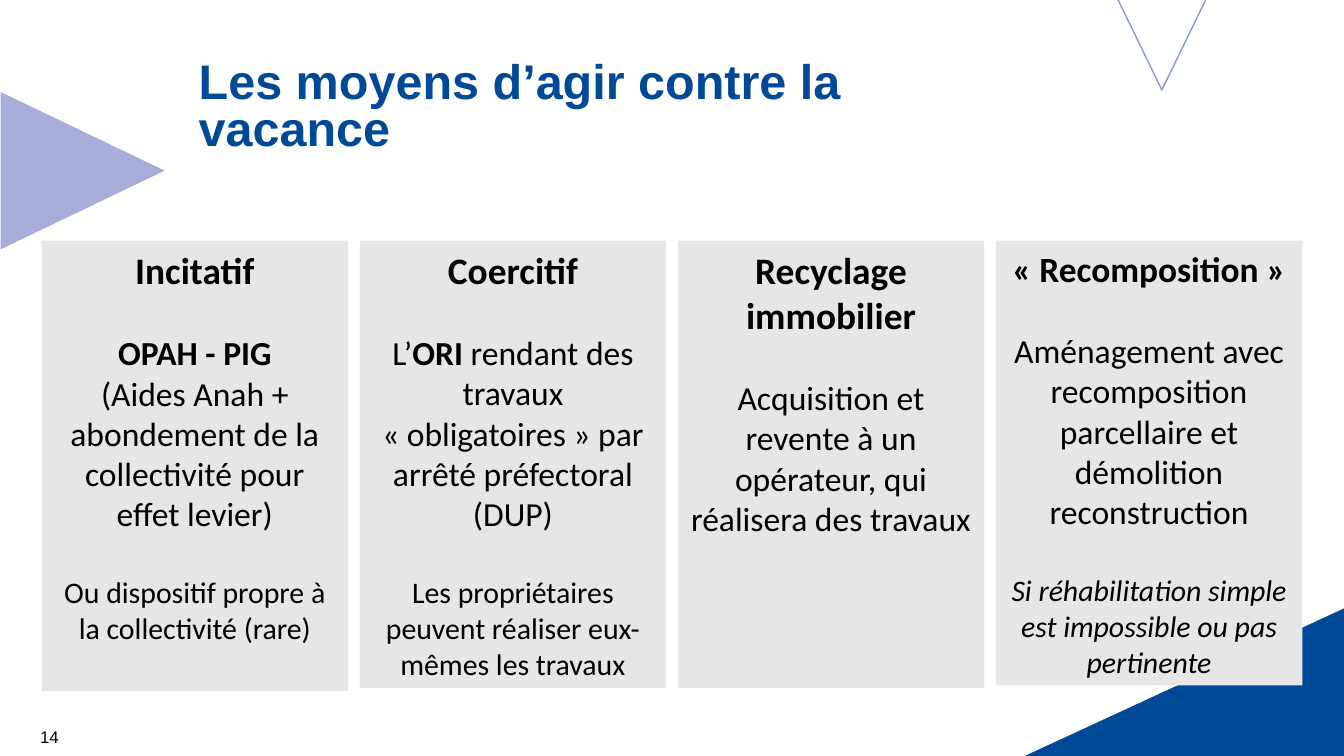
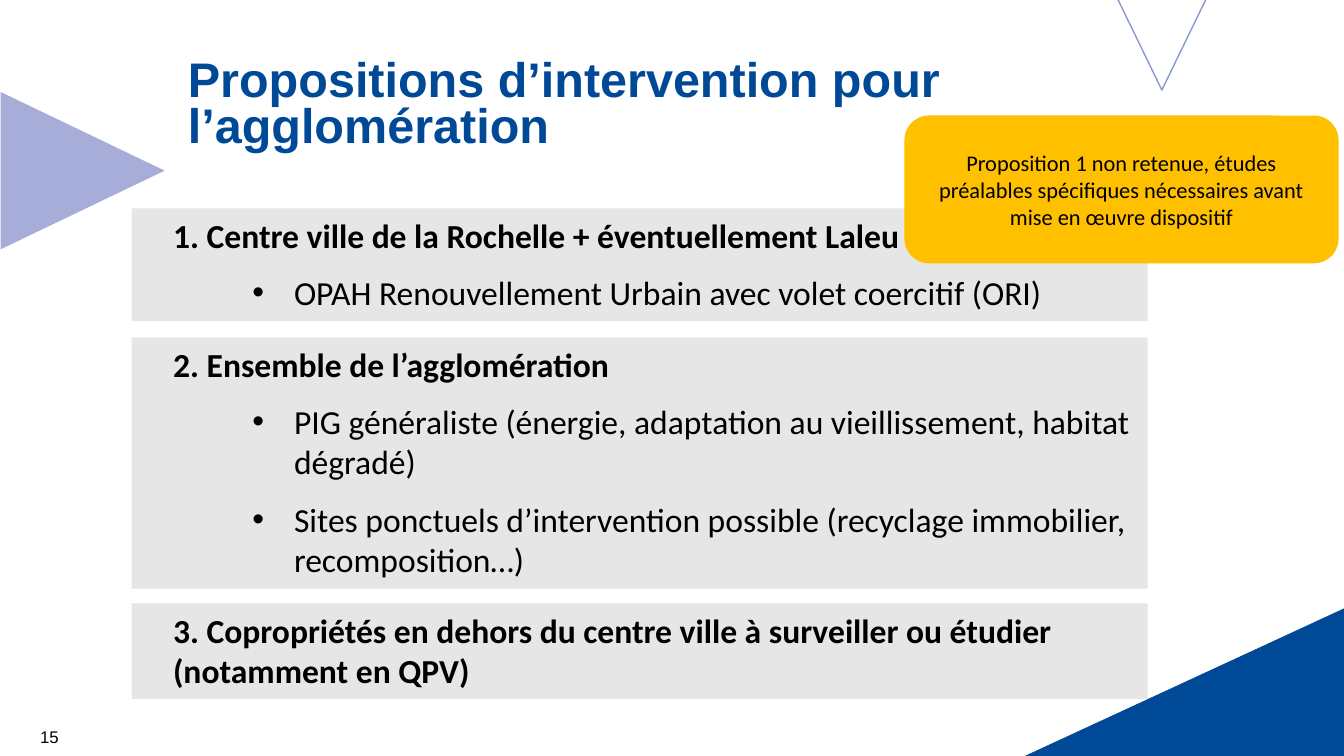
import lxml.etree
import pptx
import pptx.dml.color
import pptx.enum.shapes
import pptx.enum.text
import pptx.oxml.ns
import pptx.util

Inches = pptx.util.Inches
Pt = pptx.util.Pt
RGBColor = pptx.dml.color.RGBColor
SHAPE = pptx.enum.shapes.MSO_SHAPE
ALIGN = pptx.enum.text.PP_ALIGN
ANCHOR = pptx.enum.text.MSO_ANCHOR
AUTO_SIZE = pptx.enum.text.MSO_AUTO_SIZE

BLUE = RGBColor(0x00, 0x49, 0x96)
LAVENDER = RGBColor(0xA5, 0xAD, 0xD8)
PERIWINKLE = RGBColor(0x89, 0x97, 0xD4)
GREY = RGBColor(0xE6, 0xE6, 0xE6)
AMBER = RGBColor(0xFF, 0xC0, 0x00)
BLACK = RGBColor(0x00, 0x00, 0x00)

SLIDE_SIZE = (10, 10 * 9 / 16)
NUMBER_AREA = (0.2, 5.33, 1.02, 0.3)
NO_BREAK_SPACE = chr(160)

MEANS_TITLE = ("Les moyens d’agir contre la vacance", (1.38, 0.23, 5.36, 1.17))
PLANS_TITLE = ("Propositions d’intervention pour l’agglomération",
               (1.3, 0.21, 6.14, 1.17))

# Height, heading size, then (style, text); asterisks enclose bold words.
MEANS = [
    (3.35, 20, [
        ("heading", "Incitatif"),
        ("lead", "*OPAH - PIG*"),
        ("body", "(Aides Anah + abondement de la collectivité pour effet levier)"),
        ("note", "Ou dispositif propre à la collectivité (rare)"),
    ]),
    (3.33, 20, [
        ("heading", "Coercitif"),
        ("lead", "L’*ORI* rendant des travaux « obligatoires » par arrêté "
                 "préfectoral (DUP)"),
        ("note", "Les propriétaires peuvent réaliser eux-mêmes les travaux"),
    ]),
    (3.33, 20, [
        ("heading", "Recyclage immobilier"),
        ("lead", "Acquisition et revente à un opérateur, qui réalisera des travaux"),
    ]),
    (3.31, 19, [
        ("heading", "« Recomposition »"),
        ("lead", "Aménagement avec recomposition parcellaire et démolition "
                 "reconstruction"),
        ("remark", "Si réhabilitation simple est impossible ou pas pertinente"),
    ]),
]
# Style: font values and space before, in points.
MEANS_STYLES = {
    "heading": ({"bold": True}, 0),
    "lead": ({"size": Pt(18)}, 21.5),
    "body": ({"size": Pt(18)}, 0),
    "note": ({"size": Pt(16)}, 21.5),
    "remark": ({"size": Pt(16), "italic": True}, 21.5),
}
COLUMN_LEFT, COLUMN_TOP, COLUMN_WIDTH = 0.31, 1.79, 2.28

# Top, height, heading, bullets.
PLANS = [
    (1.55, 0.84, "1. Centre ville de la Rochelle + éventuellement Laleu",
     ["OPAH Renouvellement Urbain avec volet coercitif (ORI)"]),
    (2.51, 1.87, "2. Ensemble de l’agglomération",
     ["PIG généraliste (énergie, adaptation au vieillissement, habitat dégradé)",
      "Sites ponctuels d’intervention possible (recyclage immobilier, "
      "recomposition…)"]),
    (4.49, 0.71, "3. Copropriétés en dehors du centre ville à surveiller ou "
                 "étudier (notamment en QPV)", []),
]
PLAN_LEFT, PLAN_WIDTH = 0.98, 7.56
CALLOUT = ("Proposition 1 non retenue, études préalables spécifiques nécessaires "
           "avant mise en œuvre dispositif", (6.73, 0.86, 3.23, 1.1))


def apply(target, values):
    for name, value in values.items():
        setattr(target, name, value)


def bind_quotes(text):
    """Keep French quotation marks on the line of the words they enclose."""
    return text.replace("« ", "«" + NO_BREAK_SPACE).replace(" »", NO_BREAK_SPACE + "»")


def add_block(page, kind, area, fill=None, line=None, line_width=0.75):
    box = page.shapes.add_shape(kind, *map(Inches, area))
    box.shadow.inherit = False
    if fill is None:
        box.fill.background()
    else:
        box.fill.solid()
        box.fill.fore_color.rgb = fill
    if line is None:
        box.line.fill.background()
    else:
        box.line.color.rgb = line
        box.line.width = Pt(line_width)
    return box


def add_paragraph(frame, text, font, color=BLACK, **layout):
    """Fill the empty first paragraph or append one; asterisks toggle bold."""
    para = frame.paragraphs[0]
    if para.runs:
        para = frame.add_paragraph()
    apply(para, layout)
    for index, part in enumerate(bind_quotes(text).split("*")):
        if part:
            span = para.add_run()
            span.text = part
            apply(span.font, {"name": "Calibri", "bold": index % 2 == 1, **font})
            span.font.color.rgb = color
    return para


def indent(para, left, hanging=0.0, bullet=None):
    properties = para._p.get_or_add_pPr()
    properties.set("marL", str(Inches(left)))
    properties.set("indent", str(Inches(-hanging)))
    if bullet:
        qn = pptx.oxml.ns.qn
        bullet_color = lxml.etree.SubElement(properties, qn("a:buClr"))
        lxml.etree.SubElement(bullet_color, qn("a:srgbClr"), val=str(BLACK))
        lxml.etree.SubElement(properties, qn("a:buFont"), typeface="Arial")
        lxml.etree.SubElement(properties, qn("a:buChar"), char=bullet)


def add_label(page, text, area, font, color, **layout):
    box = page.shapes.add_textbox(*map(Inches, area))
    apply(box.text_frame, {"word_wrap": True, "vertical_anchor": ANCHOR.MIDDLE})
    add_paragraph(box.text_frame, text, {"name": "Arial", **font}, color, **layout)


def add_page(deck, title, number):
    """Add a page with the shared triangles, title and page number."""
    page = deck.slides.add_slide(deck.slide_layouts[6])
    arrow = add_block(page, SHAPE.ISOSCELES_TRIANGLE, (0.03, 0.66, 1.17, 1.22), LAVENDER)
    arrow.rotation = 90
    corner = add_block(page, SHAPE.RIGHT_TRIANGLE, (7.62, 4.53, 2.38, 1.1),
                       BLUE, BLUE, 0.25)
    corner.element.spPr.xfrm.set("flipH", "1")
    outline = add_block(page, SHAPE.ISOSCELES_TRIANGLE, (8.31, -0.02, 0.67, 0.69),
                        line=PERIWINKLE)
    outline.rotation = 180
    text, area = title
    add_label(page, text, area, {"size": Pt(26), "bold": True}, BLUE,
              line_spacing=Pt(25))
    add_label(page, str(number), NUMBER_AREA, {"size": Pt(9)}, BLACK)
    return page


def add_means(page):
    right_edge = SLIDE_SIZE[0] - COLUMN_LEFT
    pitch = (right_edge - COLUMN_WIDTH - COLUMN_LEFT) / (len(MEANS) - 1)
    for index, (height, heading_size, lines) in enumerate(MEANS):
        left = COLUMN_LEFT + index * pitch
        box = add_block(page, SHAPE.RECTANGLE,
                        (left, COLUMN_TOP, COLUMN_WIDTH, height), GREY)
        apply(box.text_frame, {
            "word_wrap": True, "vertical_anchor": ANCHOR.TOP,
            "margin_left": Inches(0.09), "margin_right": Inches(0.09)})
        for style, text in lines:
            font, gap = MEANS_STYLES[style]
            add_paragraph(box.text_frame, text, {"size": Pt(heading_size), **font},
                          alignment=ALIGN.CENTER, space_before=Pt(gap))


def add_plans(page):
    for top, height, heading, bullets in PLANS:
        box = add_block(page, SHAPE.RECTANGLE, (PLAN_LEFT, top, PLAN_WIDTH, height), GREY)
        frame = box.text_frame
        apply(frame, {"word_wrap": True, "vertical_anchor": ANCHOR.TOP,
                      "auto_size": AUTO_SIZE.SHAPE_TO_FIT_TEXT})
        layout = {"alignment": ALIGN.LEFT, "space_before": Pt(9)}
        para = add_paragraph(frame, heading, {"size": Pt(18), "bold": True}, **layout)
        indent(para, 0.21)
        for text in bullets:
            para = add_paragraph(frame, text, {"size": Pt(18)}, level=1, **layout)
            indent(para, 1.11, 0.31, "•")


def add_callout(page):
    text, area = CALLOUT
    box = add_block(page, SHAPE.ROUNDED_RECTANGLE, area, AMBER)
    apply(box.text_frame, {"word_wrap": True, "vertical_anchor": ANCHOR.MIDDLE})
    add_paragraph(box.text_frame, text, {"size": Pt(12)}, alignment=ALIGN.CENTER)


def main():
    deck = pptx.Presentation()
    deck.slide_width, deck.slide_height = map(Inches, SLIDE_SIZE)
    add_means(add_page(deck, MEANS_TITLE, 14))
    plans_page = add_page(deck, PLANS_TITLE, 15)
    add_plans(plans_page)
    add_callout(plans_page)
    deck.save("out.pptx")


if __name__ == "__main__":
    main()
